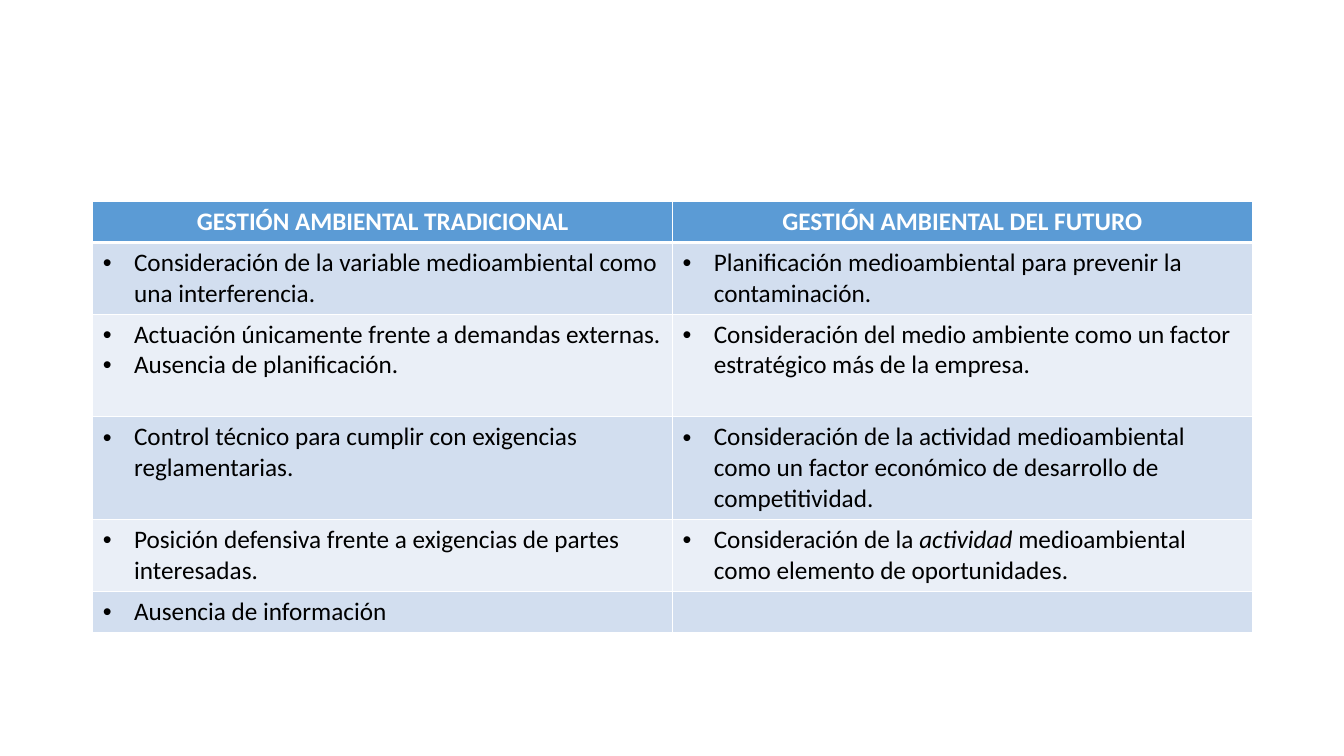
import dataclasses

import lxml.etree
import pptx
import pptx.dml.color
import pptx.enum.text
import pptx.oxml.ns
import pptx.table
import pptx.text.text
import pptx.util

Inches = pptx.util.Inches
qn = pptx.oxml.ns.qn

COLORS = {
    "header": "5B9BD5",
    "odd": "D2DEEF",
    "even": "EAEFF7",
    "white": "FFFFFF",
    "black": "000000",
}
FONT = {"name": "Calibri", "size": pptx.util.Pt(18), "bold": False, "italic": False}


@dataclasses.dataclass
class Run:
    text: str
    italic: bool = False


@dataclasses.dataclass
class Row:
    height: float
    left: list[list[Run]]
    right: list[list[Run]]


def plain(*texts: str) -> list[list[Run]]:
    return [[Run(text)] for text in texts]


ROWS = [
    Row(0.4, plain("GESTIÓN AMBIENTAL TRADICIONAL"), plain("GESTIÓN AMBIENTAL DEL FUTURO")),
    Row(0.71,
        plain("Consideración de la variable medioambiental como una interferencia."),
        plain("Planificación medioambiental para prevenir la contaminación.")),
    Row(1.02,
        plain("Actuación únicamente frente a demandas externas.", "Ausencia de planificación."),
        plain("Consideración del medio ambiente como un factor estratégico más de la empresa.")),
    Row(1.02,
        plain("Control técnico para cumplir con exigencias reglamentarias."),
        plain("Consideración de la actividad medioambiental como un factor económico "
              "de desarrollo de competitividad.")),
    Row(0.71,
        plain("Posición defensiva frente a exigencias de partes interesadas."),
        [[Run("Consideración de la "), Run("actividad ", True),
          Run("medioambiental como elemento de oportunidades.")]]),
    Row(0.4, plain("Ausencia de información"), []),
]


def rgb(key: str) -> pptx.dml.color.RGBColor:
    return pptx.dml.color.RGBColor.from_string(COLORS[key])


def add_borders(cell: pptx.table._Cell, widths: dict[str, float]) -> None:
    tc_pr = cell._tc.get_or_add_tcPr()
    for side, width in widths.items():
        ln = lxml.etree.SubElement(tc_pr, qn(f"a:ln{side}"), w=str(pptx.util.Pt(width)))
        fill = lxml.etree.SubElement(ln, qn("a:solidFill"))
        lxml.etree.SubElement(fill, qn("a:srgbClr"), val=COLORS["white"])


def add_bullet(p: pptx.text.text._Paragraph) -> None:
    p_pr = p._p.get_or_add_pPr()
    indent = Inches(0.31)
    p_pr.set("marL", str(indent))
    p_pr.set("indent", str(-indent))
    lxml.etree.SubElement(p_pr, qn("a:buFont"), typeface="Arial")
    lxml.etree.SubElement(p_pr, qn("a:buChar"), char="•")


def fill_cell(cell: pptx.table._Cell, paragraphs: list[list[Run]], row: int) -> None:
    header = row == 0
    add_borders(cell, {"L": 1, "R": 1, "T": 3 if row == 1 else 1, "B": 3 if header else 1})
    cell.fill.solid()
    cell.fill.fore_color.rgb = rgb("header" if header else "odd" if row % 2 else "even")
    tf = cell.text_frame
    for i, runs in enumerate(paragraphs):
        p = tf.add_paragraph() if i else tf.paragraphs[0]
        if header:
            p.alignment = pptx.enum.text.PP_ALIGN.CENTER
        else:
            add_bullet(p)
        for run in runs:
            r = p.add_run()
            r.text = run.text
            for name, value in (FONT | {"bold": header, "italic": run.italic}).items():
                setattr(r.font, name, value)
            r.font.color.rgb = rgb("white" if header else "black")


def main() -> None:
    prs = pptx.Presentation()
    prs.slide_width, prs.slide_height = Inches(13.33), Inches(7.5)
    s = prs.slides.add_slide(prs.slide_layouts[6])
    height = sum(row.height for row in ROWS)
    table = s.shapes.add_table(
        len(ROWS), 2, Inches(0.92), Inches(2), Inches(11.5), Inches(height)).table
    for i, row in enumerate(ROWS):
        table.rows[i].height = Inches(row.height)
        for j, paragraphs in enumerate((row.left, row.right)):
            fill_cell(table.cell(i, j), paragraphs, i)
    prs.save("out.pptx")


if __name__ == "__main__":
    main()
